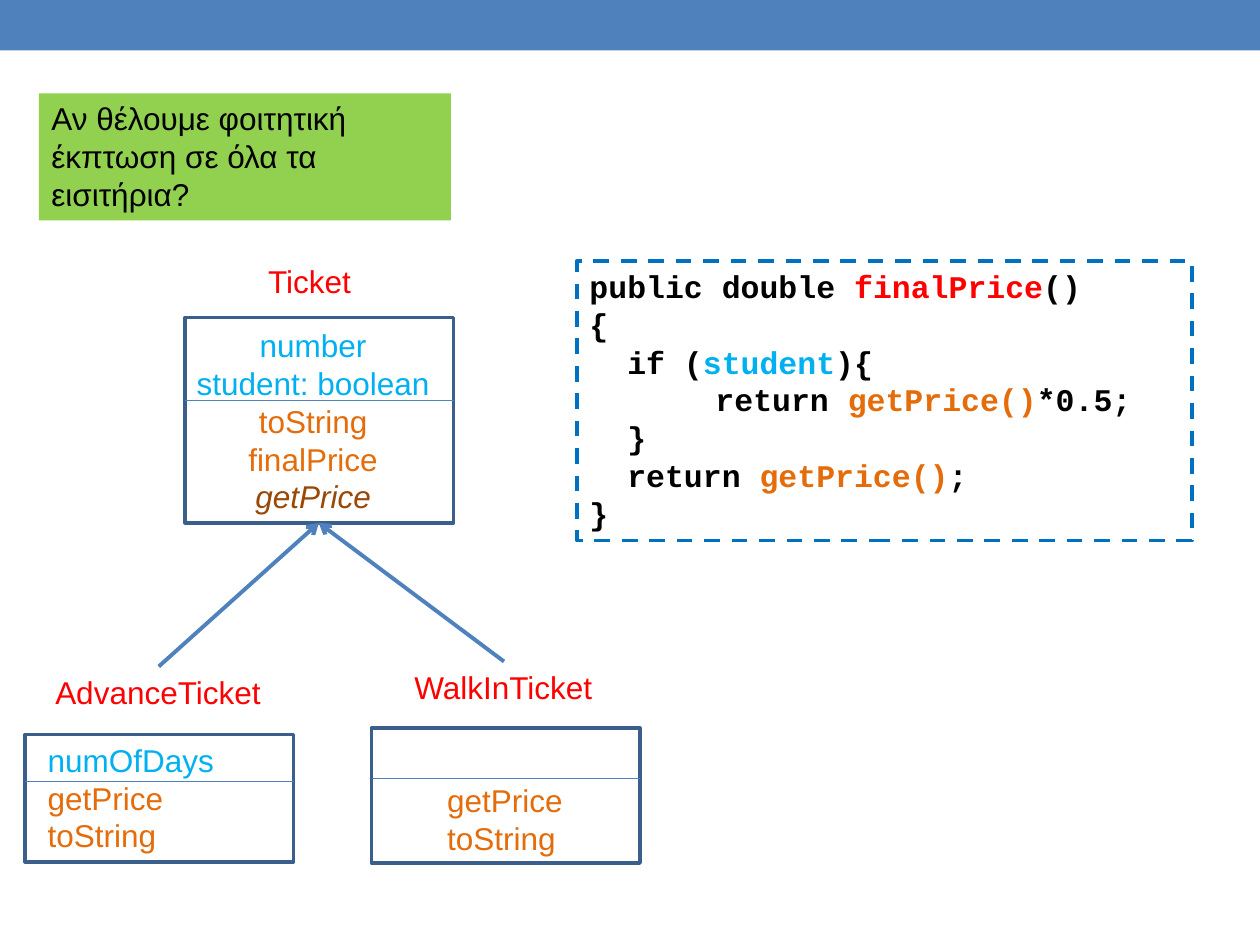
from dataclasses import dataclass

import pptx
import pptx.dml.color
import pptx.enum.dml
import pptx.enum.shapes
import pptx.enum.text
import pptx.oxml
import pptx.oxml.ns
import pptx.util
from pptx.util import Inches

COLORS = {
    "accent": "4F81BD",
    "outline": "3A5F8C",
    "field": "00B0F0",
    "method": "E46C0A",
    "abstract": "984807",
    "name": "FF0000",
    "text": "000000",
    "question": "92D050",
    "code_border": "0070C0",
}


@dataclass
class Run:
    text: str
    color: str = "text"
    italic: bool = False


@dataclass
class Line:
    runs: list[Run]
    indent: float = 0


@dataclass
class Area:
    left: float
    top: float
    width: float
    height: float

    def lengths(self) -> list[pptx.util.Length]:
        return [Inches(n) for n in (self.left, self.top, self.width, self.height)]


@dataclass
class ClassDiagram:
    name: str
    name_area: Area
    frame: Area
    divider: float
    members_area: Area
    members: list[Run]
    centered: bool = False


def rgb(color: str) -> pptx.dml.color.RGBColor:
    return pptx.dml.color.RGBColor.from_string(COLORS[color])


def add_rectangle(slide, area: Area, fill: str | None = None, outline: str | None = None):
    box = slide.shapes.add_shape(pptx.enum.shapes.MSO_SHAPE.RECTANGLE, *area.lengths())
    box.shadow.inherit = False
    if fill:
        box.fill.solid()
        box.fill.fore_color.rgb = rgb(fill)
    else:
        box.fill.background()
    if outline:
        box.line.color.rgb = rgb(outline)
        box.line.width = pptx.util.Pt(2.08)
    else:
        box.line.fill.background()
    return box


def write_lines(box, lines: list[Line], font: str = "Arial", bold: bool = False,
                centered: bool = False, wrap: bool = False) -> None:
    frame = box.text_frame
    frame.word_wrap = wrap
    frame.vertical_anchor = pptx.enum.text.MSO_ANCHOR.TOP
    align = pptx.enum.text.PP_ALIGN
    for index, line in enumerate(lines):
        para = frame.add_paragraph() if index else frame.paragraphs[0]
        para.alignment = align.CENTER if centered else align.LEFT
        if line.indent:
            para._p.get_or_add_pPr().set("marL", str(Inches(line.indent)))
        for part in line.runs:
            run = para.add_run()
            run.text = part.text
            run.font.name = font
            run.font.size = pptx.util.Pt(18)
            run.font.bold = bold
            run.font.italic = part.italic
            run.font.color.rgb = rgb(part.color)


def add_text(slide, area: Area, runs: list[Run], centered: bool = False) -> None:
    """Add a text box with one paragraph for each run."""
    box = slide.shapes.add_textbox(*area.lengths())
    write_lines(box, [Line([run]) for run in runs], centered=centered)


def add_line(slide, start: tuple[float, float], end: tuple[float, float],
             width: float, arrow: bool = False) -> None:
    line = slide.shapes.add_connector(
        pptx.enum.shapes.MSO_CONNECTOR.STRAIGHT, *(Inches(n) for n in start + end))
    line.line.color.rgb = rgb("accent")
    line.line.width = pptx.util.Pt(width)
    if arrow:
        head = pptx.oxml.parse_xml(
            f'<a:tailEnd {pptx.oxml.ns.nsdecls("a")} type="arrow"/>')
        line.line._get_or_add_ln().append(head)
    line._element.spPr.append(
        pptx.oxml.parse_xml(f'<a:effectLst {pptx.oxml.ns.nsdecls("a")}/>'))


def add_class(slide, diagram: ClassDiagram) -> None:
    frame = diagram.frame
    add_rectangle(slide, frame, outline="outline")
    add_text(slide, diagram.members_area, diagram.members, diagram.centered)
    add_line(slide, (frame.left, diagram.divider),
             (frame.left + frame.width, diagram.divider), 0.75)
    add_text(slide, diagram.name_area, [Run(diagram.name, "name")])


GET_PRICE = Run("getPrice", "method")
TO_STRING = Run("toString", "method")

CLASSES = [
    ClassDiagram("AdvanceTicket", Area(0.34, 5.29, 1.85, 0.4),
                 Area(0.2, 5.83, 2.13, 1.01), 6.2, Area(0.28, 5.83, 1.53, 1.01),
                 [Run("numOfDays", "field"), GET_PRICE, TO_STRING]),
    ClassDiagram("WalkInTicket", Area(3.19, 5.25, 1.63, 0.4),
                 Area(2.95, 5.78, 2.13, 1.07), 6.18, Area(3.45, 6.15, 1.13, 0.71),
                 [GET_PRICE, TO_STRING]),
    ClassDiagram("Ticket", Area(2.03, 2.03, 0.87, 0.4),
                 Area(1.47, 2.52, 2.13, 1.63), 3.18, Area(1.45, 2.54, 2.07, 1.62),
                 [Run("number", "field"), Run("student: boolean", "field"), TO_STRING,
                  Run("finalPrice", "method"), Run("getPrice", "abstract", True)],
                 centered=True),
]

PRICE_CALL = Run("getPrice()", "method")
CODE = [
    Line([Run("public double "), Run("finalPrice", "name"), Run("()")]),
    Line([Run("{")]),
    Line([Run("if ("), Run("student", "field"), Run("){")], 0.3),
    Line([Run("return "), PRICE_CALL, Run("*0.5;")], 1),
    Line([Run("}")], 0.3),
    Line([Run("return "), PRICE_CALL, Run(";")], 0.3),
    Line([Run("}")]),
]


def main() -> None:
    deck = pptx.Presentation()
    deck.slide_width, deck.slide_height = Inches(10), Inches(7.5)
    slide = deck.slides.add_slide(deck.slide_layouts[6])

    add_rectangle(slide, Area(0, 0, 10, 0.4), fill="accent")
    for diagram in CLASSES:
        add_class(slide, diagram)
    for subclass_top in ((1.26, 5.29), (4, 5.25)):
        add_line(slide, subclass_top, (2.53, 4.15), 2.25, arrow=True)

    question = add_rectangle(slide, Area(0.31, 0.74, 3.27, 1.01), fill="question")
    write_lines(question, [Line([Run("Αν θέλουμε φοιτητική έκπτωση σε όλα τα εισιτήρια?")])],
                wrap=True)

    code = add_rectangle(slide, Area(4.58, 2.07, 4.88, 2.22), outline="code_border")
    code.line.width = pptx.util.Pt(2.25)
    code.line.dash_style = pptx.enum.dml.MSO_LINE.DASH
    write_lines(code, CODE, font="Courier New", bold=True, wrap=True)

    deck.save("out.pptx")


if __name__ == "__main__":
    main()
